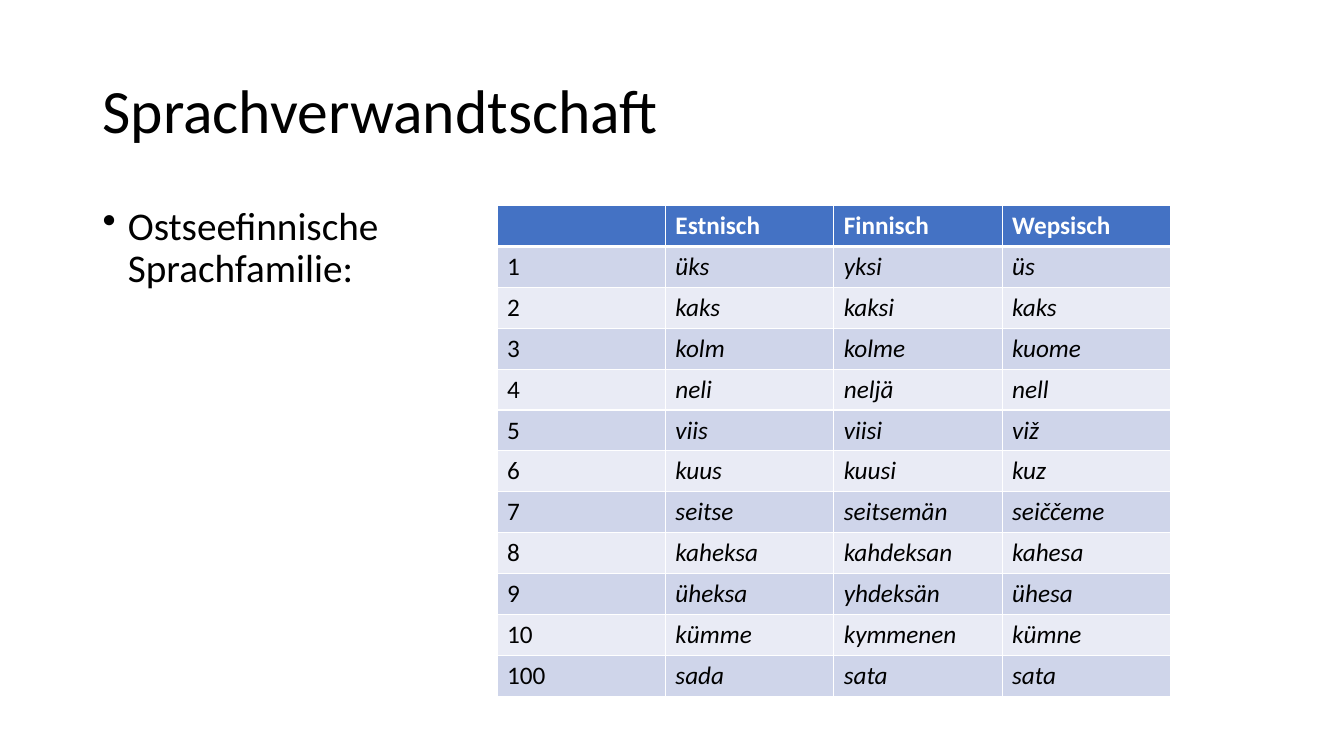
from lxml.etree import SubElement
from pptx import Presentation
from pptx.dml.color import RGBColor
from pptx.enum.text import MSO_ANCHOR
from pptx.oxml import parse_xml
from pptx.oxml.ns import nsdecls, qn
from pptx.util import Inches, Pt

FONT = "Calibri"
BLACK = RGBColor(0x00, 0x00, 0x00)
WHITE = RGBColor(0xFF, 0xFF, 0xFF)
HEADER_BLUE = RGBColor(0x44, 0x72, 0xC4)
BAND_DARK = RGBColor(0xCF, 0xD5, 0xEA)
BAND_LIGHT = RGBColor(0xE9, 0xEB, 0xF5)

MARGIN = 0.92
TEXT_WIDTH = 11.5
COLUMN_WIDTH = 1.67
ROW_HEIGHT = 4.87 / 12
THIN, THICK = 1, 3

NUMERALS = [
    ("", "Estnisch", "Finnisch", "Wepsisch"),
    ("1", "üks", "yksi", "üs"),
    ("2", "kaks", "kaksi", "kaks"),
    ("3", "kolm", "kolme", "kuome"),
    ("4", "neli", "neljä", "nell"),
    ("5", "viis", "viisi", "viž"),
    ("6", "kuus", "kuusi", "kuz"),
    ("7", "seitse", "seitsemän", "seiččeme"),
    ("8", "kaheksa", "kahdeksan", "kahesa"),
    ("9", "üheksa", "yhdeksän", "ühesa"),
    ("10", "kümme", "kymmenen", "kümne"),
    ("100", "sada", "sata", "sata"),
]


def style_font(paragraph, size, color, bold=False, italic=False):
    font = paragraph.font
    font.name = FONT
    font.size = Pt(size)
    font.color.rgb = color
    font.bold = bold
    font.italic = italic


def add_text(slide, text, top, height, size, anchor):
    box = slide.shapes.add_textbox(
        Inches(MARGIN), Inches(top), Inches(TEXT_WIDTH), Inches(height))
    frame = box.text_frame
    frame.word_wrap = True
    frame.vertical_anchor = anchor
    paragraph = frame.paragraphs[0]
    paragraph.text = text
    paragraph.line_spacing = 0.9
    style_font(paragraph, size, BLACK)
    return paragraph


def add_bullet(paragraph, indent):
    properties = paragraph._p.get_or_add_pPr()
    properties.set("marL", str(Inches(indent)))
    properties.set("indent", str(-Inches(indent)))
    bullet = SubElement(properties, qn("a:buChar"), char="•")
    properties.find(qn("a:defRPr")).addprevious(bullet)


def set_borders(cell, top, bottom):
    """Draw white borders; top and bottom are widths in points."""
    properties = cell._tc.get_or_add_tcPr()
    widths = {"lnL": THIN, "lnR": THIN, "lnT": top, "lnB": bottom}
    for position, (tag, width) in enumerate(widths.items()):
        properties.insert(position, parse_xml(
            f'<a:{tag} {nsdecls("a")} w="{Pt(width)}"><a:solidFill>'
            f'<a:srgbClr val="{WHITE}"/></a:solidFill></a:{tag}>'))


def fill_cell(cell, text, row, column):
    header = row == 0
    band = BAND_DARK if row % 2 else BAND_LIGHT
    cell.fill.solid()
    cell.fill.fore_color.rgb = HEADER_BLUE if header else band
    set_borders(cell, THICK if row == 1 else THIN, THICK if header else THIN)
    paragraph = cell.text_frame.paragraphs[0]
    paragraph.text = text
    style_font(paragraph, 18, WHITE if header else BLACK,
               bold=header, italic=not header and column > 0)


def add_numeral_table(slide, left, top):
    rows, columns = len(NUMERALS), len(NUMERALS[0])
    table = slide.shapes.add_table(
        rows, columns, Inches(left), Inches(top),
        Inches(columns * COLUMN_WIDTH), Inches(rows * ROW_HEIGHT)).table
    for row, words in enumerate(NUMERALS):
        for column, word in enumerate(words):
            fill_cell(table.cell(row, column), word, row, column)


def main():
    presentation = Presentation()
    presentation.slide_width = Inches(13.33)
    presentation.slide_height = Inches(7.5)
    slide = presentation.slides.add_slide(presentation.slide_layouts[6])

    add_text(slide, "Sprachverwandtschaft", 0.4, 1.45, 44, MSO_ANCHOR.MIDDLE)
    family = add_text(slide, "Ostseefinnische\vSprachfamilie:", 2, 4.76, 28,
                      MSO_ANCHOR.TOP)
    family.space_before = Pt(10)
    add_bullet(family, 0.25)
    add_numeral_table(slide, 4.93, 2.04)

    presentation.save("out.pptx")


if __name__ == "__main__":
    main()
